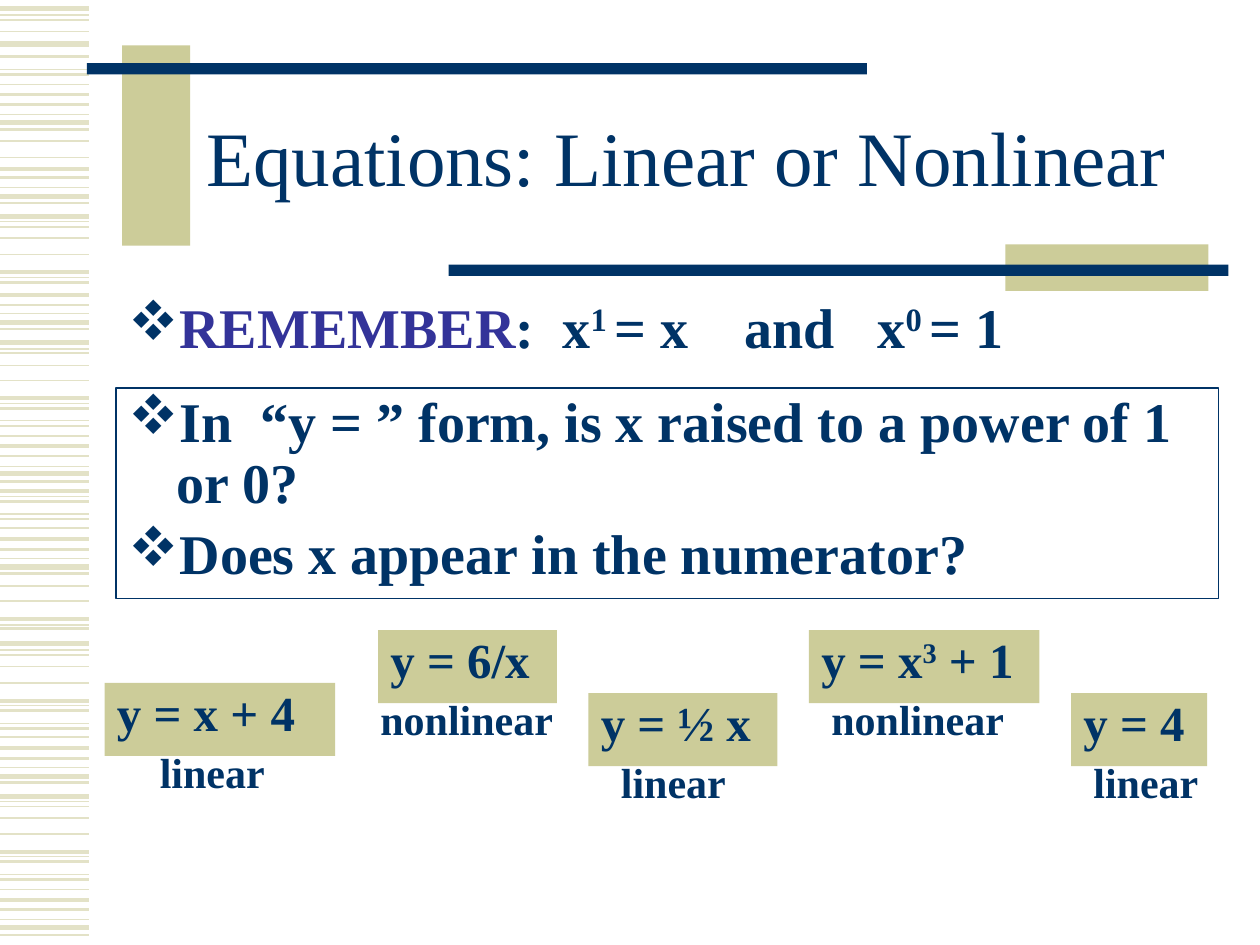
from lxml import etree
from pptx import Presentation
from pptx.dml.color import RGBColor
from pptx.enum.shapes import MSO_CONNECTOR, MSO_SHAPE
from pptx.enum.text import MSO_ANCHOR, PP_ALIGN
from pptx.oxml.ns import qn
from pptx.util import Inches, Pt

RECTANGLE, STRAIGHT = MSO_SHAPE.RECTANGLE, MSO_CONNECTOR.STRAIGHT
TOP, MIDDLE = MSO_ANCHOR.TOP, MSO_ANCHOR.MIDDLE
LEFT, CENTER = PP_ALIGN.LEFT, PP_ALIGN.CENTER

FONT = "Times New Roman"
BULLET_FONT, BULLET_DIAMOND = "Wingdings", "v"  # this symbol font draws v as a diamond
COLORS = {"navy": "003366", "violet": "333399", "khaki": "CCCC99", "stripe": "E3E2C7"}
HANGING = 0.38
STRIPE_LENGTH = 0.71

# Stripe heights down the left margin, by line width in points
STRIPES = {
    0.75: [0.12, 0.55, 0.91, 1.49, 1.76, 2.2, 2.49, 2.77, 3.2, 3.34, 3.7, 3.94,
           4.08, 4.43, 4.96, 5.16, 5.6, 5.74, 6.09, 6.36, 6.8, 6.94, 7.3],
    1: [0.16, 0.25, 0.67, 1.12, 1.25, 1.8, 1.89, 2.02, 2.8, 2.9, 3.02, 3.46,
        4.19, 4.65, 4.77, 5.2, 5.29, 5.42, 5.85, 6.4, 6.49, 6.62, 7.06],
    1.5: [0.45, 0.59, 0.83, 1.03, 1.41, 1.61, 2.24, 2.42, 2.61, 3.24, 3.38, 3.62, 3.82,
          3.98, 4.12, 4.36, 4.55, 4.99, 5.64, 5.78, 6.02, 6.21, 6.84, 6.98, 7.22, 7.42],
    2.25: [0.75, 1.34, 2.16, 2.34, 3.16, 3.54, 3.9, 4.28, 4.91, 5.56, 5.94, 6.76, 7.14],
    3: [0.07, 0.35, 0.97, 1.56, 1.72, 2.56, 2.72, 3.76, 4.5, 5.11, 6.16, 6.32, 7.36],
}

# Title decoration: color and (left, top, width, height)
DECORATION = [
    ("khaki", (0.97, 0.36, 0.54, 1.59)),
    ("navy", (0.69, 0.5, 6.19, 0.09)),
    ("khaki", (7.98, 1.94, 1.61, 0.37)),
    ("navy", (3.56, 2.1, 6.19, 0.09)),
]

# Text runs: (text, style), where style is "", "violet" or "super"
TITLE = [("Equations: Linear or Nonlinear", "")]
REMINDER = [("REMEMBER", "violet"), (":  x", ""), ("1 ", "super"),
            ("= x    and   x", ""), ("0 ", "super"), ("= 1", "")]
QUESTIONS = [
    [("In  “y = ” form, is x raised to a power of 1 or 0?", "")],
    [("Does x appear in the numerator?", "")],
]

# Equation runs, left, top, width; then answer, its left and width
EXAMPLES = [
    ([("y = x + 4", "")], 0.83, 5.42, 1.83, "linear", 1.17, 1.17),
    ([("y = 6/x", "")], 3, 5, 1.42, "nonlinear", 2.92, 1.58),
    ([("y = ½ x", "")], 4.67, 5.5, 1.5, "linear", 4.83, 1.17),
    ([("y = x", ""), ("3", "super"), (" + 1", "")], 6.42, 5, 1.83, "nonlinear", 6.5, 1.58),
    ([("y = 4", "")], 8.5, 5.5, 1.08, "linear", 8.58, 1.08),
]
EQUATION_HEIGHT, ANSWER_HEIGHT, ANSWER_DROP = 0.58, 0.42, 0.5


def rgb(name):
    return RGBColor.from_string(COLORS[name])


def add_stripe(page, top, width):
    y = Inches(top)
    stripe = page.shapes.add_connector(STRAIGHT, 0, y, Inches(STRIPE_LENGTH), y)
    stripe.line.color.rgb = rgb("stripe")
    stripe.line.width = Pt(width)
    etree.SubElement(stripe.element.spPr, qn("a:effectLst"))


def add_box(page, area, fill=None, outline=None):
    box = page.shapes.add_shape(RECTANGLE, *map(Inches, area))
    box.shadow.inherit = False
    if fill:
        box.fill.solid()
        box.fill.fore_color.rgb = rgb(fill)
    else:
        box.fill.background()
    if outline:
        box.line.color.rgb = rgb(outline)
        box.line.width = Pt(0.75)
    else:
        box.line.fill.background()
    return box


def set_indent(para, bullet):
    props = para._p.get_or_add_pPr()
    props.set("marL", str(Inches(HANGING)))
    props.set("indent", str(-Inches(HANGING)))
    if bullet:
        color = etree.SubElement(props, qn("a:buClr"))
        etree.SubElement(color, qn("a:srgbClr"), val=COLORS["navy"])
        etree.SubElement(props, qn("a:buFont"), typeface=BULLET_FONT, charset="2")
        etree.SubElement(props, qn("a:buChar"), char=BULLET_DIAMOND)


def write(box, paragraphs, size, bullet=False, title=False):
    frame = box.text_frame
    frame.word_wrap = True
    frame.vertical_anchor = MIDDLE if title else TOP
    for index, runs in enumerate(paragraphs):
        para = frame.add_paragraph() if index else frame.paragraphs[0]
        para.alignment = CENTER if title else LEFT
        para.line_spacing = 0.85 if title else 0.9
        if not title:
            para.space_before = Pt(round(size * 0.2, 1))
            set_indent(para, bullet)
        for text, style in runs:
            span = para.add_run()
            span.text = text
            span.font.name = FONT
            span.font.size = Pt(size)
            span.font.bold = not title
            span.font.color.rgb = rgb("violet" if style == "violet" else "navy")
            if style == "super":
                span._r.get_or_add_rPr().set("baseline", "30000")


def add_text(page, area, paragraphs, size, **options):
    box = page.shapes.add_textbox(*map(Inches, area))
    write(box, paragraphs, size, **options)


def main():
    deck = Presentation()
    deck.slide_width, deck.slide_height = Inches(10), Inches(7.5)
    page = deck.slides.add_slide(deck.slide_layouts[6])

    # Background stripes and title decoration
    for width, tops in STRIPES.items():
        for top in tops:
            add_stripe(page, top, width)
    for color, area in DECORATION:
        add_box(page, area, fill=color)

    # Title, reminder and framed questions
    add_text(page, (1.33, 0.67, 8.24, 1.25), [TITLE], 44, title=True)
    add_text(page, (0.92, 2.33, 8.67, 0.5), [REMINDER], 32, bullet=True)
    frame = add_box(page, (0.92, 3.08, 8.75, 1.67), outline="navy")
    write(frame, QUESTIONS, 32, bullet=True)

    # Equations with their answers below
    for equation, left, top, width, answer, answer_left, answer_width in EXAMPLES:
        box = add_box(page, (left, top, width, EQUATION_HEIGHT), fill="khaki")
        write(box, [equation], 28)
        area = (answer_left, top + ANSWER_DROP, answer_width, ANSWER_HEIGHT)
        add_text(page, area, [[(answer, "")]], 24)

    deck.save("out.pptx")


if __name__ == "__main__":
    main()
